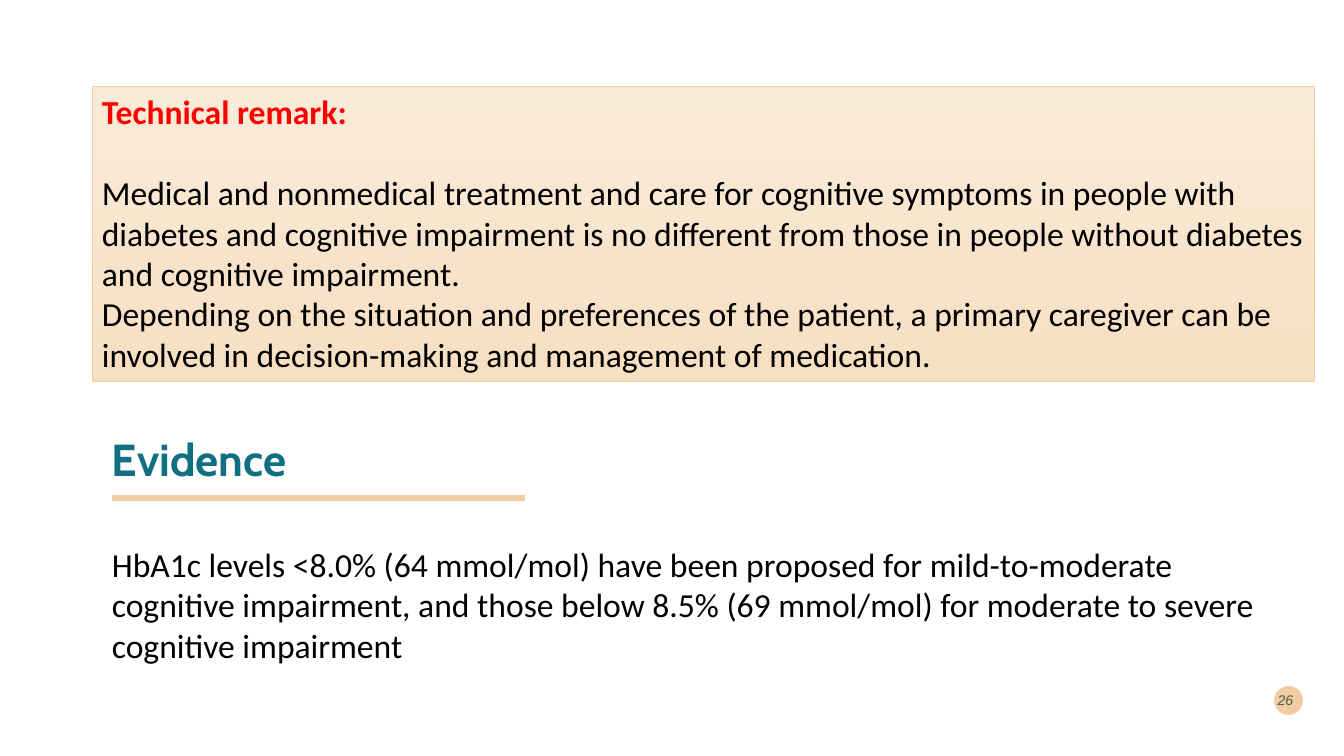
from lxml.etree import SubElement
from pptx import Presentation
from pptx.dml.color import RGBColor as RGB
from pptx.enum.shapes import MSO_CONNECTOR as LINE, MSO_SHAPE as SHAPE
from pptx.enum.text import MSO_ANCHOR as ANCHOR, PP_ALIGN as ALIGN
from pptx.oxml.ns import qn
from pptx.util import Pt

REMARK = [
    "Technical remark:",
    "Medical and nonmedical treatment and care for cognitive symptoms in people with "
    "diabetes and cognitive impairment is no different from those in people without "
    "diabetes and cognitive impairment.",
    "Depending on the situation and preferences of the patient, a primary caregiver "
    "can be involved in decision-making and management of medication.",
]
TITLE = "Evidence"
PROOF = ("HbA1c levels <8.0% (64 mmol/mol) have been proposed for mild-to-moderate "
         "cognitive impairment, and those below 8.5% (69 mmol/mol) for moderate to "
         "severe cognitive impairment")
PAGE = "26"

# Places in px: left, top, width, height
SIZE = (1344, 756)
AREAS = {
    "remark": (92, 86, 1222, 295),
    "title": (102, 389, 1159, 146),
    "proof": (102, 539, 1202, 132),
    "dot": (1274, 686, 29, 29),
    "page": (1264, 680, 39, 40),
}
RULE = (112, 498, 525, 498)

THEME = {
    "sand": RGB.from_string("F0CDA1"),
    "fade": [RGB.from_string("FAEBD9"), RGB.from_string("F7DFC2")],
    "teal": RGB.from_string("107082"),
    "red": RGB.from_string("FF0000"),
    "black": RGB.from_string("000000"),
    "dark": RGB.from_string("00292E"),
    "body": 24, "head": 32, "small": 10,
    "gap": 29.3,
}


def px(*vals):
    return [round(v * 914400 / 100.8) for v in vals]


def style(para, size, font, color, bold=False, italic=False):
    for run in para.runs:
        face = run.font
        face.size, face.name = Pt(size), font
        face.bold, face.italic = bold, italic
        face.color.rgb = color


def add_text(slide, area, text, *look, anchor=ANCHOR.TOP, **more):
    frame = slide.shapes.add_textbox(*px(*AREAS[area])).text_frame
    frame.word_wrap = True
    frame.vertical_anchor = anchor
    frame.text = text
    para = frame.paragraphs[0]
    style(para, *look, **more)
    return para


def add_remark(slide):
    box = slide.shapes.add_shape(SHAPE.RECTANGLE, *px(*AREAS["remark"]))
    box.shadow.inherit = False
    box.fill.gradient()
    box.fill.gradient_angle = 270
    for stop, color in zip(box.fill.gradient_stops, THEME["fade"]):
        stop.color.rgb = color
    box.line.color.rgb = THEME["sand"]
    box.line.width = Pt(0.5)
    frame = box.text_frame
    frame.word_wrap = True
    frame.vertical_anchor = ANCHOR.TOP
    frame.text = "\n".join(REMARK)
    for i, para in enumerate(frame.paragraphs):
        para.alignment = ALIGN.LEFT
        color = THEME["black" if i else "red"]
        style(para, THEME["body"], "Calibri", color, bold=i == 0)
    frame.paragraphs[0].space_after = Pt(THEME["gap"])


def add_page(slide):
    dot = slide.shapes.add_shape(SHAPE.OVAL, *px(*AREAS["dot"]))
    dot.shadow.inherit = False
    dot.fill.solid()
    dot.fill.fore_color.rgb = THEME["sand"]
    dot.line.fill.background()
    para = add_text(slide, "page", PAGE, THEME["small"], "Arial", THEME["dark"],
                    italic=True, anchor=ANCHOR.MIDDLE)
    para.alignment = ALIGN.RIGHT
    for tone in para.runs[0].font._element.iter(qn("a:srgbClr")):
        SubElement(tone, qn("a:alpha"), val="70000")


def add_rule(slide):
    rule = slide.shapes.add_connector(LINE.STRAIGHT, *px(*RULE))
    rule.line.color.rgb = THEME["sand"]
    rule.line.width = Pt(4.32)
    SubElement(rule._element.spPr, qn("a:effectLst"))


def main():
    deck = Presentation()
    deck.slide_width, deck.slide_height = px(*SIZE)
    slide = deck.slides.add_slide(deck.slide_layouts[6])
    add_page(slide)
    title = add_text(slide, "title", TITLE, THEME["head"], "Cabin", THEME["teal"],
                     bold=True, anchor=ANCHOR.MIDDLE)
    title.line_spacing = 0.9
    add_rule(slide)
    add_text(slide, "proof", PROOF, THEME["body"], "Calibri", THEME["black"])
    add_remark(slide)
    deck.save("out.pptx")


if __name__ == "__main__":
    main()
